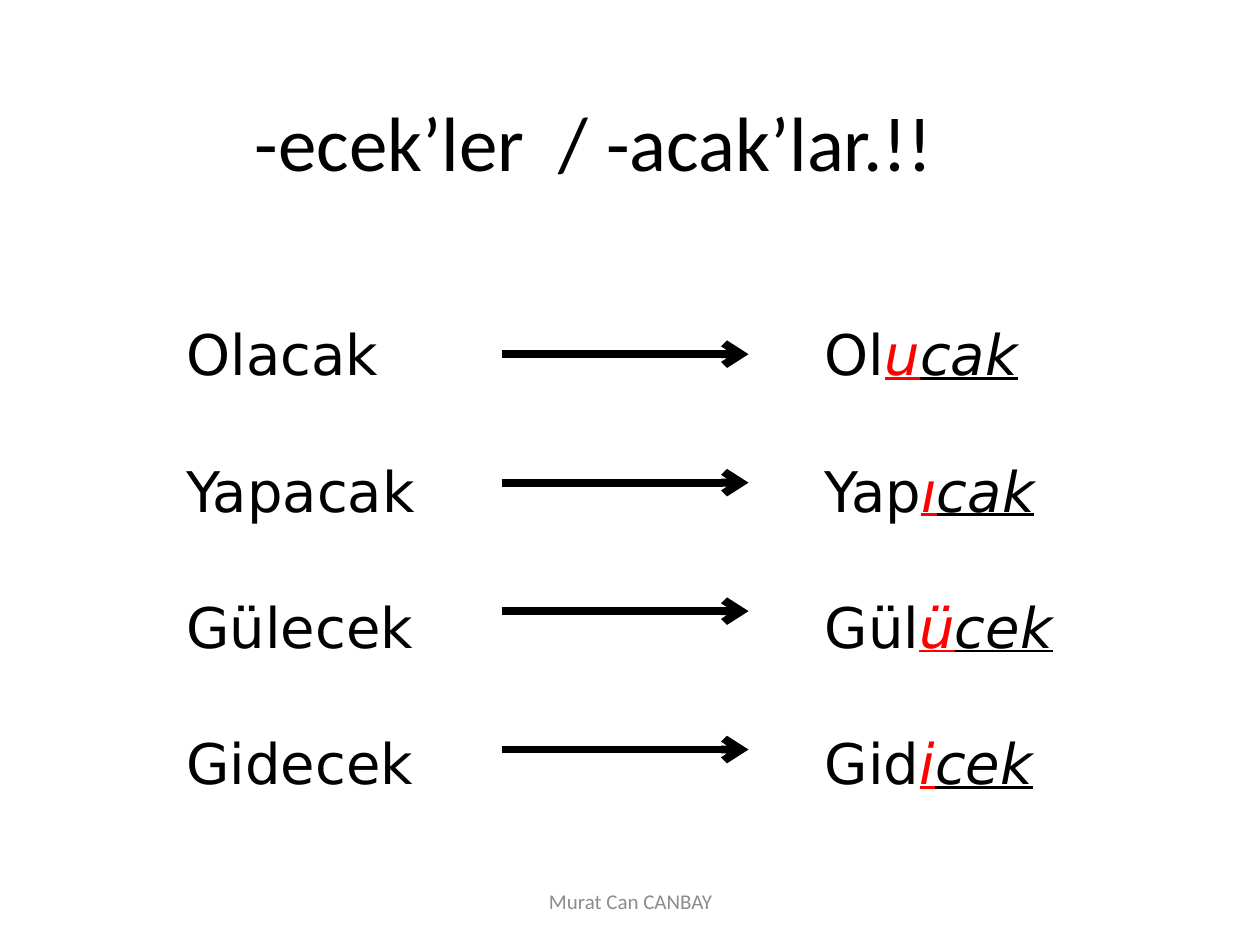
"""Build the slide on Turkish future-tense endings and their spoken forms."""
from dataclasses import dataclass

from lxml import etree
from pptx import Presentation
from pptx.dml.color import RGBColor
from pptx.enum import shapes, text
from pptx.oxml import ns
from pptx.util import Cm, Pt


@dataclass(frozen=True)
class Theme:
    """Hold the colours, fonts and sizes of the slide."""
    ink: RGBColor = RGBColor(0, 0, 0)
    accent: RGBColor = RGBColor(0xFF, 0, 0)
    muted: RGBColor = RGBColor(0x8C, 0x8C, 0x8C)
    heading_font: str = "Calibri"
    word_font: str = "DejaVu Sans"
    title_size: int = 44
    word_size: int = 32
    footer_size: int = 12
    word_gap: float = 39.5
    arrow_width: float = 4.5


@dataclass(frozen=True)
class Verb:
    """Describe a written verb, its spoken parts and its arrow height."""
    written: str
    stem: str
    vowel: str
    ending: str
    arrow_y: float


THEME = Theme()
VERBS = (
    Verb("Olacak", "Ol", "u", "cak", 7.14),
    Verb("Yapacak", "Yap", "ı", "cak", 9.73),
    Verb("Gülecek", "Gül", "ü", "cek", 12.32),
    Verb("Gidecek", "Gid", "i", "cek", 15.11),
)
ARROW_LEFT, ARROW_RIGHT = 10.11, 15.09
WORDS_TOP, WORDS_WIDTH, WORDS_HEIGHT = 6.22, 6.2, 10.5


def style(para, font: str, size: float, color: RGBColor) -> None:
    """Set the common font of a paragraph."""
    para.font.name = font
    para.font.size = Pt(size)
    para.font.color.rgb = color


def add_heading(box, wording: str, size: float, color: RGBColor) -> None:
    """Write one centred line in the heading font."""
    frame = box.text_frame
    frame.word_wrap = True
    frame.vertical_anchor = text.MSO_ANCHOR.MIDDLE
    para = frame.paragraphs[0]
    para.text = wording
    para.alignment = text.PP_ALIGN.CENTER
    style(para, THEME.heading_font, size, color)


def add_words(page, left: float, rows: list[tuple[str, ...]]) -> None:
    """Write a column of words, each with an optional vowel and ending."""
    box = page.shapes.add_textbox(Cm(left), Cm(WORDS_TOP), Cm(WORDS_WIDTH), Cm(WORDS_HEIGHT))
    frame = box.text_frame
    frame.word_wrap = True
    frame.margin_top = Cm(0.23)
    for index, (stem, *changed) in enumerate(rows):
        para = frame.add_paragraph() if index else frame.paragraphs[0]
        style(para, THEME.word_font, THEME.word_size, THEME.ink)
        para.space_after = Pt(THEME.word_gap)
        para.add_run().text = stem
        for part, color in zip(changed, (THEME.accent, THEME.ink)):
            span = para.add_run()
            span.text = part
            span.font.italic = True
            span.font.underline = True
            span.font.color.rgb = color


def add_arrow(page, y: float) -> None:
    """Draw a horizontal arrow between the columns."""
    arrow = page.shapes.add_connector(
        shapes.MSO_CONNECTOR.STRAIGHT, Cm(ARROW_LEFT), Cm(y), Cm(ARROW_RIGHT), Cm(y))
    arrow.line.color.rgb = THEME.ink
    arrow.line.width = Pt(THEME.arrow_width)
    properties = arrow.element.spPr
    etree.SubElement(properties.find(ns.qn("a:ln")), ns.qn("a:tailEnd"), type="arrow")
    etree.SubElement(properties, ns.qn("a:effectLst"))


def main() -> None:
    """Build and save the deck."""
    deck = Presentation()
    deck.slide_width, deck.slide_height = Cm(25.4), Cm(19.05)
    page = deck.slides.add_slide(deck.slide_layouts[5])

    title = page.shapes.title
    title.left, title.top, title.width, title.height = Cm(1.5), Cm(0.84), Cm(20.96), Cm(3.99)
    add_heading(title, "-ecek’ler  / -acak’lar.!!", THEME.title_size, THEME.ink)

    add_words(page, 3.51, [(verb.written,) for verb in VERBS])
    add_words(page, 16.38, [(verb.stem, verb.vowel, verb.ending) for verb in VERBS])
    for verb in VERBS:
        add_arrow(page, verb.arrow_y)

    footer = page.shapes.add_textbox(Cm(8.69), Cm(17.65), Cm(8.05), Cm(1.02))
    add_heading(footer, "Murat Can CANBAY", THEME.footer_size, THEME.muted)
    deck.save("out.pptx")


if __name__ == "__main__":
    main()
